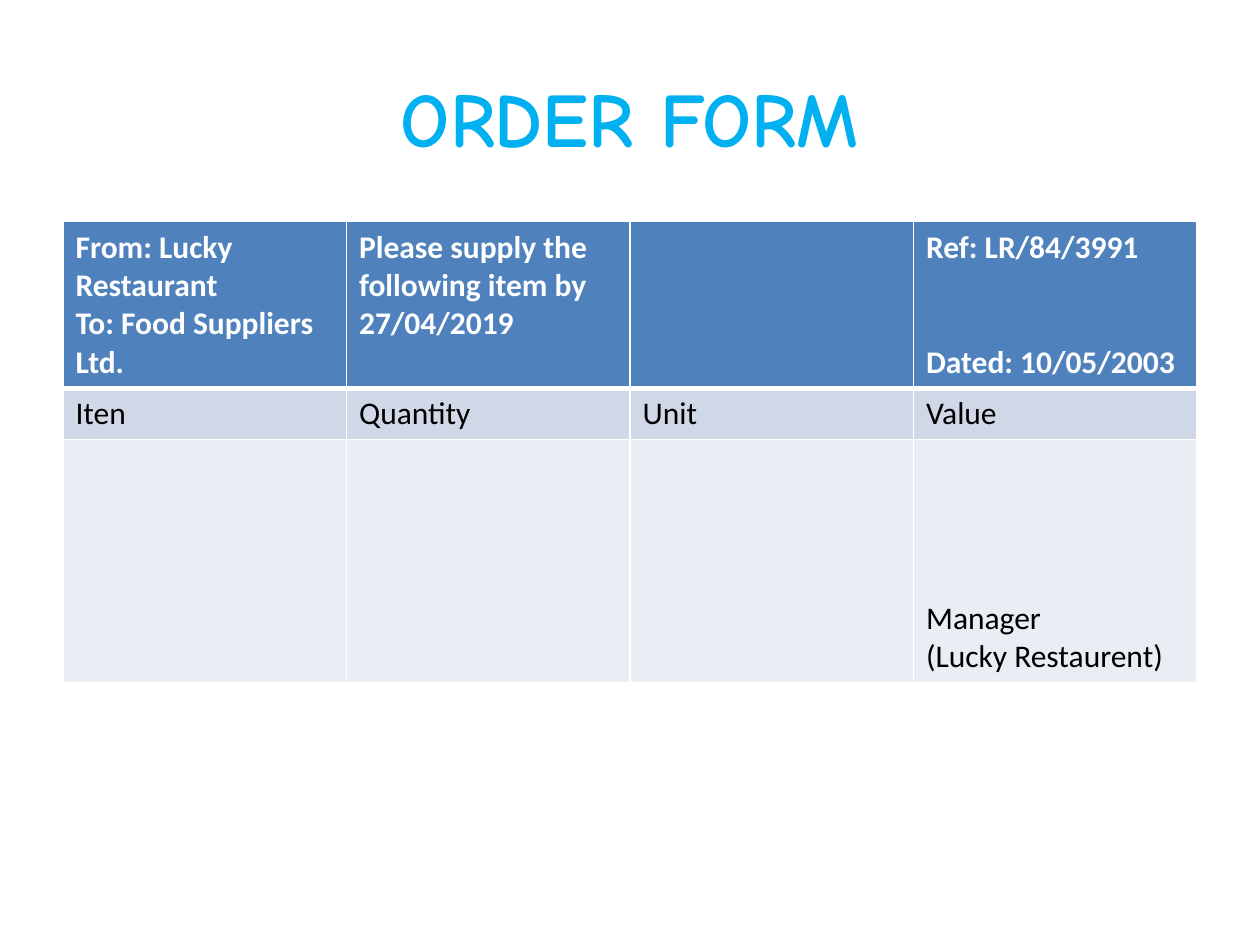
from lxml.etree import SubElement
from pptx import Presentation
from pptx.dml.color import RGBColor as RGB
from pptx.enum.text import MSO_ANCHOR as Anchor, PP_ALIGN as Align
from pptx.oxml.ns import qn
from pptx.util import Inches, Pt

COLORS = {
    "title": "00B0F0",
    "header": "4F81BD",
    "labels": "D0D8E8",
    "entries": "E9EDF4",
    "light": "FFFFFF",
    "dark": "000000",
}
TITLE_FONT = {"name": "Comic Neue", "size": Pt(44), "bold": True}
HEADER_FONT = {"name": "Calibri", "size": Pt(18), "bold": True}
BODY_FONT = {**HEADER_FONT, "bold": False}

ROWS = [
    ("header", 1.32, [
        ["From: Lucky Restaurant", "To: Food Suppliers Ltd."],
        ["Please supply the following item by 27/04/2019"],
        [],
        ["Ref: LR/84/3991", "Dated: 10/05/2003"],
    ]),
    ("labels", 0.4, [["Iten"], ["Quantity"], ["Unit"], ["Value"]]),
    ("entries", 1.93, [[], [], [], ["Manager", "(Lucky Restaurent)"]]),
]


def format_font(font, values, color):
    for attribute, value in values.items():
        setattr(font, attribute, value)
    font.color.rgb = RGB.from_string(COLORS[color])


def draw_borders(cell, widths):
    properties = cell._tc.get_or_add_tcPr()
    for side, width in widths.items():
        line = SubElement(properties, qn(f"a:ln{side}"), w=str(Pt(width)))
        fill = SubElement(line, qn("a:solidFill"))
        SubElement(fill, qn("a:srgbClr"), val=COLORS["light"])


def add_title(slide, left, top, width, height):
    title = slide.shapes.title
    title.left, title.top, title.width, title.height = left, top, width, height
    title.text_frame.vertical_anchor = Anchor.MIDDLE
    heading = title.text_frame.paragraphs[0]
    heading.text = "ORDER FORM"
    heading.alignment = Align.CENTER
    format_font(heading.runs[0].font, TITLE_FONT, "title")


def fill_cell(cell, lines, band):
    is_header = band == "header"
    widths = {"L": 1, "R": 1, "T": 3 if band == "labels" else 1,
              "B": 3 if is_header else 1}
    draw_borders(cell, widths)
    cell.fill.solid()
    cell.fill.fore_color.rgb = RGB.from_string(COLORS[band])
    cell.vertical_anchor = Anchor.BOTTOM if band == "entries" else Anchor.TOP
    cell.text = "\n".join(lines)
    for paragraph in cell.text_frame.paragraphs:
        format_font(paragraph.font, HEADER_FONT if is_header else BODY_FONT,
                    "light" if is_header else "dark")


def add_order_table(slide, left, top, width, height):
    columns = len(ROWS[0][2])
    table = slide.shapes.add_table(
        len(ROWS), columns, left, top, width, height).table
    for row, (band, row_height, entries) in enumerate(ROWS):
        table.rows[row].height = Inches(row_height)
        for column, lines in enumerate(entries):
            fill_cell(table.cell(row, column), lines, band)
    dated = table.cell(0, columns - 1).text_frame.paragraphs[1]
    dated.space_before = Pt(44)


def main():
    deck = Presentation()
    deck.slide_width, deck.slide_height = Inches(10), Inches(7.5)
    slide = deck.slides.add_slide(deck.slide_layouts[5])
    add_title(slide, Inches(0.5), Inches(0.3), Inches(9), Inches(1.25))
    add_order_table(slide, Inches(0.5), Inches(1.76), Inches(9), Inches(3.65))
    deck.save("out.pptx")


if __name__ == "__main__":
    main()
